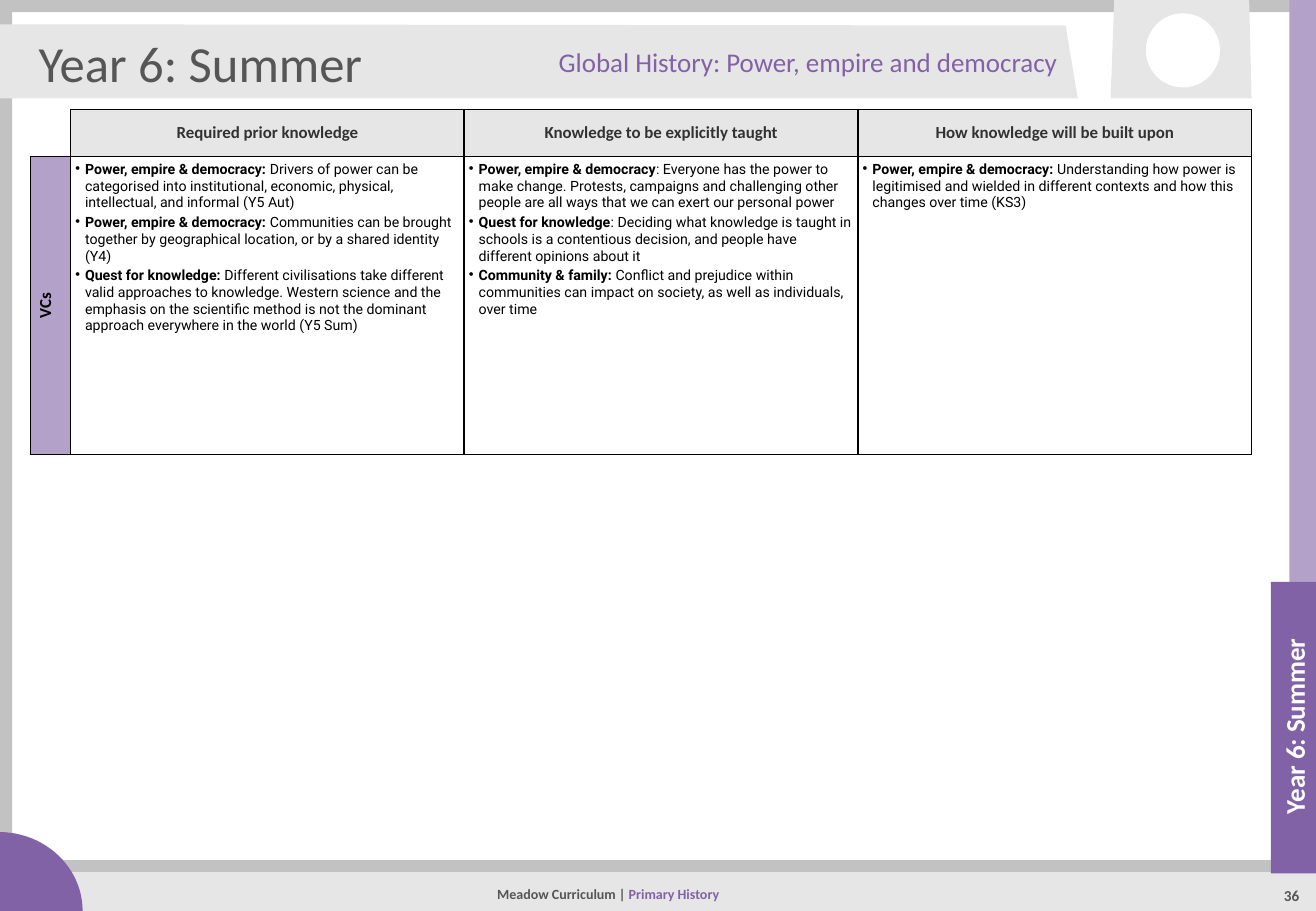
from lxml import etree
from pptx import Presentation
from pptx.dml.color import RGBColor
from pptx.enum.shapes import MSO_CONNECTOR, MSO_SHAPE
from pptx.enum.text import MSO_ANCHOR, PP_ALIGN
from pptx.oxml import parse_xml
from pptx.oxml.ns import nsdecls, qn
from pptx.util import Inches, Pt

PURPLE, LILAC, WHITE, BLACK = "8262A6", "B4A1CA", "FFFFFF", "000000"
PALE, SILVER, GREY, DARK = "E6E6E6", "C2C2C2", "565656", "323232"

HEADINGS = [
    "Required prior knowledge",
    "Knowledge to be explicitly taught",
    "How knowledge will be built upon",
]
CONCEPTS = [
    [
        ("Power, empire & democracy: ", "Drivers of power can be categorised into institutional, "
         "economic, physical, intellectual, and informal (Y5 Aut)"),
        ("Power, empire & democracy: ", "Communities can be brought together by geographical "
         "location, or by a shared identity (Y4)"),
        ("Quest for knowledge: ", "Different civilisations take different valid approaches to "
         "knowledge. Western science and the emphasis on the scientific method is not the dominant "
         "approach everywhere in the world (Y5 Sum)"),
    ],
    [
        ("Power, empire & democracy", ": Everyone has the power to make change. Protests, campaigns "
         "and challenging other people are all ways that we can exert our personal power"),
        ("Quest for knowledge", ": Deciding what knowledge is taught in schools is a contentious "
         "decision, and people have different opinions about it"),
        ("Community & family: ", "Conflict and prejudice within communities can impact on society, "
         "as well as individuals, over time"),
    ],
    [
        ("Power, empire & democracy: ", "Understanding how power is legitimised and wielded in "
         "different contexts and how this changes over time (KS3)"),
    ],
]


def rgb(color):
    return RGBColor.from_string(color)


def paint(shape, color):
    shape.shadow.inherit = False
    shape.fill.solid()
    shape.fill.fore_color.rgb = rgb(color)
    shape.line.fill.background()


def add_block(page, kind, left, top, width, height, color):
    block = page.shapes.add_shape(kind, Inches(left), Inches(top), Inches(width), Inches(height))
    paint(block, color)
    return block


def add_outline(page, points, color):
    corners = [(Inches(x), Inches(y)) for x, y in points]
    builder = page.shapes.build_freeform(*corners[0])
    builder.add_line_segments(corners[1:], close=True)
    paint(builder.convert_to_shape(), color)


def add_rule(page, left, right, top, color, weight):
    rule = page.shapes.add_connector(
        MSO_CONNECTOR.STRAIGHT, Inches(left), Inches(top), Inches(right), Inches(top))
    rule.line.color.rgb = rgb(color)
    rule.line.width = Pt(weight)
    etree.SubElement(rule._element.spPr, qn("a:effectLst"))


def add_span(para, text, size, color, bold=False, font="Calibri"):
    span = para.add_run()
    span.text = text
    span.font.name = font
    span.font.size = Pt(size)
    span.font.bold = bold
    span.font.color.rgb = rgb(color)


def add_label(page, left, top, width, height, spans, size, align, bold=False, rotation=0):
    box = page.shapes.add_textbox(Inches(left), Inches(top), Inches(width), Inches(height))
    box.rotation = rotation
    frame = box.text_frame
    frame.word_wrap = True
    frame.vertical_anchor = MSO_ANCHOR.MIDDLE
    para = frame.paragraphs[0]
    para.alignment = align
    for text, color in spans:
        add_span(para, text, size, color, bold)


def style_cell(cell, sides, color=None):
    cell.margin_left = cell.margin_right = Inches(0.04)
    cell.margin_top = cell.margin_bottom = Inches(0.04)
    properties = cell._tc.get_or_add_tcPr()
    for side in "LRTB":
        ink = f'<a:solidFill><a:srgbClr val="{BLACK}"/></a:solidFill>' if side in sides else "<a:noFill/>"
        properties.append(parse_xml(f'<a:ln{side} {nsdecls("a")} w="12700">{ink}</a:ln{side}>'))
    if color:
        cell.fill.solid()
        cell.fill.fore_color.rgb = rgb(color)
    else:
        cell.fill.background()


def fill_heading(cell, text, fill, color):
    style_cell(cell, "LRTB", fill)
    cell.vertical_anchor = MSO_ANCHOR.MIDDLE
    para = cell.text_frame.paragraphs[0]
    para.alignment = PP_ALIGN.CENTER
    add_span(para, text, 10, color, True)


def fill_bullets(cell, items):
    style_cell(cell, "LRTB", WHITE)
    frame = cell.text_frame
    for index, (concept, detail) in enumerate(items):
        para = frame.add_paragraph() if index else frame.paragraphs[0]
        para.space_after = Pt(2)
        properties = para._p.get_or_add_pPr()
        properties.set("marL", str(Inches(0.08)))
        properties.set("indent", str(-Inches(0.08)))
        etree.SubElement(properties, qn("a:buChar"), char="•")
        add_span(para, concept, 8.4, BLACK, True, "Roboto")
        add_span(para, detail, 8.4, BLACK, False, "Roboto")


def add_knowledge_table(page):
    table = page.shapes.add_table(
        2, 4, Inches(0.25), Inches(0.9), Inches(10.05), Inches(2.84)).table
    table.first_row = table.horz_banding = False
    for column, width in zip(table.columns, [0.33, 3.24, 3.24, 3.24]):
        column.width = Inches(width)
    for row, height in zip(table.rows, [0.39, 2.45]):
        row.height = Inches(height)
    style_cell(table.cell(0, 0), "RB")
    side_cell = table.cell(1, 0)
    fill_heading(side_cell, "VCs", LILAC, BLACK)
    side_cell._tc.get_or_add_tcPr().set("vert", "vert270")
    for column, (heading, items) in enumerate(zip(HEADINGS, CONCEPTS), start=1):
        fill_heading(table.cell(0, column), heading, PALE, DARK)
        fill_bullets(table.cell(1, column), items)


def add_surround(page):
    border = add_block(page, MSO_SHAPE.FRAME, 0, 0, 10.83, 7.5, SILVER)
    border.adjustments[0] = 0.1 / 7.5
    add_block(page, MSO_SHAPE.RECTANGLE, 0.32, 7.18, 10.51, 0.32, PALE)
    add_rule(page, 0.05, 10.83, 7.13, SILVER, 7)
    add_block(page, MSO_SHAPE.ARC, -0.7, 6.85, 1.38, 1.3, PURPLE)
    add_outline(page, [(0, 0.2), (8.77, 0.21), (8.87, 0.81), (0, 0.81)], PALE)
    add_block(page, MSO_SHAPE.RECTANGLE, 10.61, 0, 0.22, 7.18, LILAC)
    add_block(page, MSO_SHAPE.RECTANGLE, 10.46, 4.79, 0.37, 2.4, PURPLE)
    add_outline(page, [(9.14, 0.81), (10.3, 0.81), (10.28, 0), (9.17, 0)], PALE)
    add_block(page, MSO_SHAPE.OVAL, 9.43, 0.11, 0.61, 0.61, WHITE)


def main():
    deck = Presentation()
    deck.slide_width, deck.slide_height = Inches(10.83), Inches(7.5)
    page = deck.slides.add_slide(deck.slide_layouts[6])
    add_surround(page)
    season = "Year 6: Summer"
    add_label(page, 0.22, 0.26, 8.42, 0.5, [(season, GREY)], 30, PP_ALIGN.LEFT)
    add_label(page, 9.46, 5.81, 2.38, 0.34, [(season, WHITE)], 16, PP_ALIGN.CENTER, True, 270)
    add_label(page, 3.69, 0.26, 5.11, 0.5,
              [("Global History: Power, empire and democracy", PURPLE)], 16, PP_ALIGN.RIGHT)
    add_label(page, 2.05, 7.21, 5.91, 0.3,
              [("Meadow Curriculum | ", GREY), ("Primary History", PURPLE)], 8.3, PP_ALIGN.CENTER, True)
    add_label(page, 10.31, 7.22, 0.64, 0.3, [("36", GREY)], 9, PP_ALIGN.CENTER, True)
    add_knowledge_table(page)
    deck.save("out.pptx")


if __name__ == "__main__":
    main()
